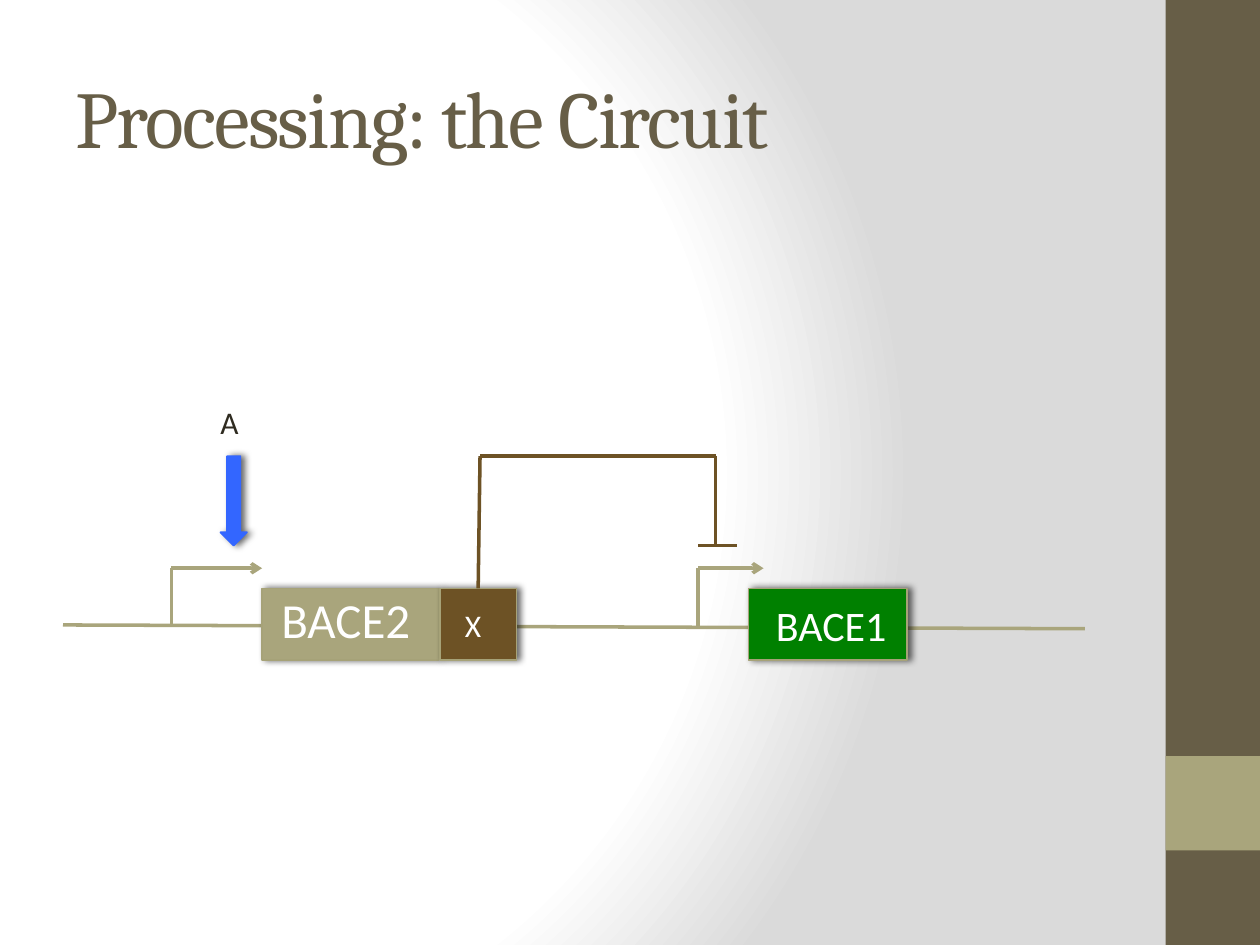
"""Builds a slide of a two-gene circuit in which X, made with BACE2, represses BACE1."""
from lxml.etree import SubElement
from pptx import Presentation
from pptx.dml.color import RGBColor
from pptx.enum.shapes import MSO_CONNECTOR, MSO_SHAPE
from pptx.enum.text import MSO_ANCHOR, MSO_AUTO_SIZE, PP_ALIGN
from pptx.oxml.ns import qn
from pptx.util import Inches, Pt

COLORS = {
    "olive": "675E47", "sand": "A9A57C", "edge": "A6A278", "brown": "6D5225",
    "green": "008000", "blue": "3366FF", "ink": "2F2B20", "white": "FFFFFF",
    "grey": "DADADA", "black": "000000",
}
COLUMNS, ROWS = 100, 75
WIDTH, HEIGHT = Inches(10), Inches(7.5)

BAND, STRAND, PROMOTER, GENE, LOOP, BAR = 92.5, 49.6, 45.1, 46.7, 36.2, 43.3
GENE_HEIGHT = 5.7
LOOP_LEFT, LOOP_RIGHT = 38.1, 56.8

BANDS = [(0, ROWS, "olive"), (60, 7.5, "sand")]
GENES = {
    "BACE2": (20.8, 14, "sand"),
    "X": (34.9, 6.1, "brown"),
    "BACE1": (59.4, 12.6, "green"),
}
INPUT_ARROW = (17.5, LOOP, 2.1, 7.1)
LINES = [
    (5, STRAND, 86.1, 49.9, "sand", False),
    (13.6, PROMOTER, 20.8, PROMOTER, "sand", True),
    (13.6, PROMOTER, 13.6, STRAND, "sand", False),
    (55.4, 49.7, 55.4, PROMOTER, "sand", False),
    (55.4, PROMOTER, 60.6, PROMOTER, "sand", True),
    (LOOP_LEFT, LOOP, LOOP_RIGHT, LOOP, "brown", False),
    (LOOP_RIGHT, LOOP, LOOP_RIGHT, BAR, "brown", False),
    (55.4, BAR, 58.5, BAR, "brown", False),
]
LABELS = [
    ("BACE2", (17.8, 46.3, 19.3, 5.7), 28, "white", PP_ALIGN.CENTER),
    ("X", (34.9, 47.6, 5.3, 4), 18, "white", PP_ALIGN.CENTER),
    ("BACE1", (60.6, 47.1, 14.2, 5), 24, "white", PP_ALIGN.LEFT),
    ("A", (16.5, 31.5, 4.3, 4), 18, "ink", PP_ALIGN.LEFT),
]


def color(name):
    return RGBColor.from_string(COLORS[name])


def place(left, top, width, height):
    cell_width, cell_height = WIDTH / COLUMNS, HEIGHT / ROWS
    return [round(n) for n in (left * cell_width, top * cell_height,
                               width * cell_width, height * cell_height)]


def add_color(parent, name):
    return SubElement(parent, qn("a:srgbClr"), val=COLORS[name])


def paint_background(page):
    page.background.fill.gradient()
    gradient = next(page.element.iter(qn("a:gradFill")))
    for child in list(gradient):
        gradient.remove(child)
    stops = SubElement(gradient, qn("a:gsLst"))
    for share, name in [(0, "white"), (75, "white"), (100, "grey")]:
        add_color(SubElement(stops, qn("a:gs"), pos=str(share * 1000)), name)
    path = SubElement(gradient, qn("a:path"), path="circle")
    SubElement(path, qn("a:fillToRect"), l="20000", t="50000", r="100000", b="50000")


def add_block(page, kind, area, fill, edge=None):
    block = page.shapes.add_shape(kind, *place(*area))
    block.shadow.inherit = False
    block.fill.solid()
    block.fill.fore_color.rgb = color(fill)
    if edge is None:
        block.line.fill.background()
        return block
    block.line.color.rgb = color(edge)
    block.line.width = Pt(1)
    effects = block.element.spPr.find(qn("a:effectLst"))
    shadow = SubElement(effects, qn("a:outerShdw"), blurRad=str(Pt(4)),
                        dist=str(Pt(2)), dir="0", rotWithShape="0")
    SubElement(add_color(shadow, "black"), qn("a:alpha"), val="60000")
    return block


def add_line(page, left, top, right, bottom, name, arrow=False):
    ends = place(left, top, right, bottom)
    line = page.shapes.add_connector(MSO_CONNECTOR.STRAIGHT, *ends)
    line.line.color.rgb = color(name)
    line.line.width = Pt(2)
    if arrow:
        SubElement(line.line._get_or_add_ln(), qn("a:tailEnd"), type="arrow")
    SubElement(line.element.spPr, qn("a:effectLst"))
    return line


def add_text(page, text, area, size, name, align=PP_ALIGN.LEFT, font="Calibri"):
    box = page.shapes.add_textbox(*place(*area))
    box.text_frame.word_wrap = True
    box.text_frame.auto_size = MSO_AUTO_SIZE.SHAPE_TO_FIT_TEXT
    para = box.text_frame.paragraphs[0]
    para.alignment = align
    span = para.add_run()
    span.text = text
    span.font.name = font
    span.font.size = Pt(size)
    span.font.color.rgb = color(name)
    return box


def main():
    deck = Presentation()
    deck.slide_width, deck.slide_height = WIDTH, HEIGHT
    page = deck.slides.add_slide(deck.slide_layouts[6])
    paint_background(page)
    for top, height, fill in BANDS:
        add_block(page, MSO_SHAPE.RECTANGLE, (BAND, top, COLUMNS - BAND, height), fill)

    title = add_text(page, "Processing: the Circuit", (5, 3, 83.3, 12.5), 46, "olive",
                     font="Cambria")
    title.text_frame.auto_size = MSO_AUTO_SIZE.NONE
    title.text_frame.vertical_anchor = MSO_ANCHOR.MIDDLE
    title.text_frame.paragraphs[0].runs[0].font._element.set("spc", "-100")

    for line in LINES:
        add_line(page, *line)
    genes = {
        gene: add_block(page, MSO_SHAPE.RECTANGLE, (left, GENE, width, GENE_HEIGHT),
                        fill, "edge")
        for gene, (left, width, fill) in GENES.items()
    }
    add_block(page, MSO_SHAPE.DOWN_ARROW, INPUT_ARROW, "blue", "blue")
    riser = add_line(page, LOOP_LEFT, GENE, LOOP_LEFT, LOOP, "brown")
    riser.begin_connect(genes["X"], 0)
    for label in LABELS:
        add_text(page, *label)
    deck.save("out.pptx")


if __name__ == "__main__":
    main()
